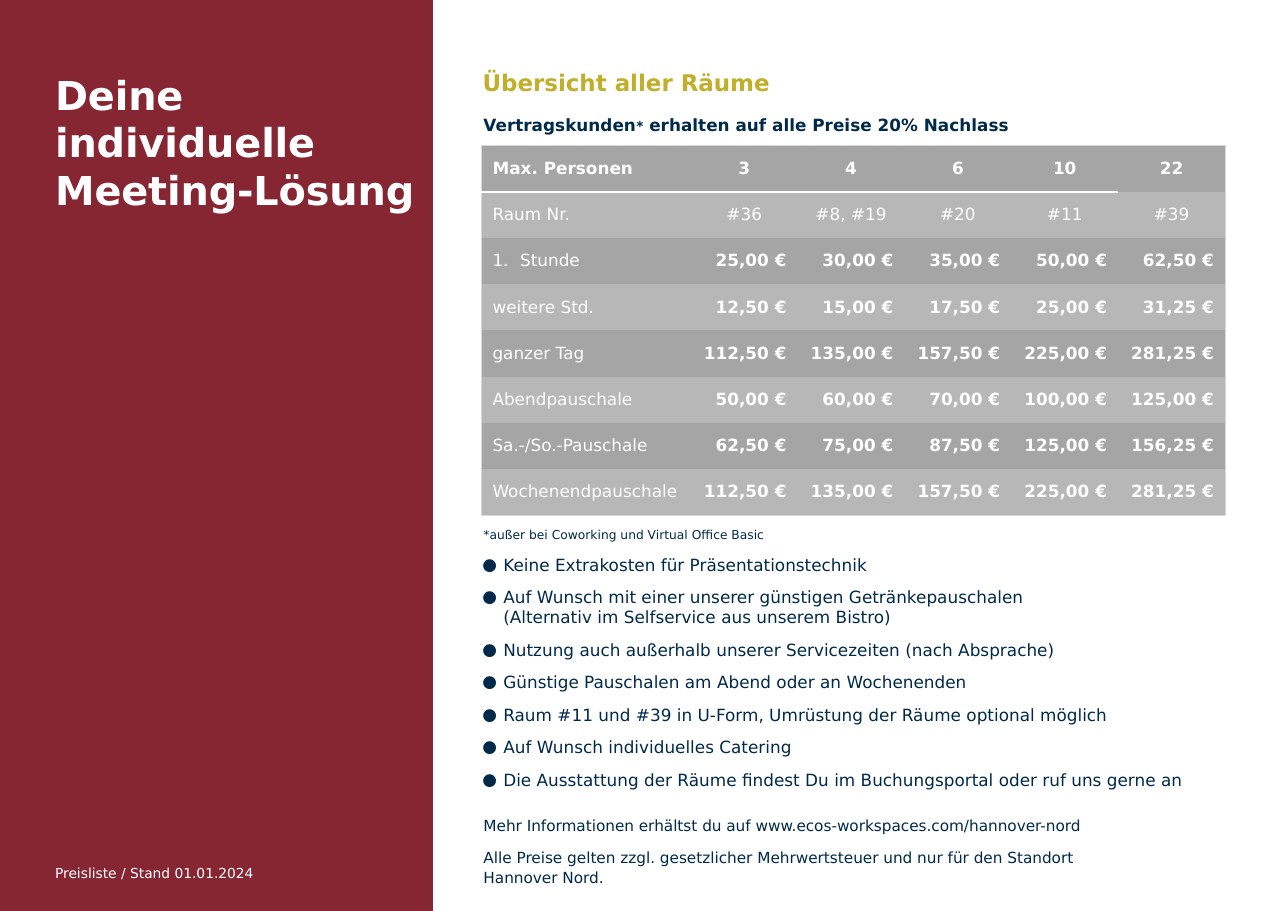
"""Builds the price list slide for the meeting rooms."""
from copy import deepcopy

from lxml import etree
from pptx import Presentation
from pptx.dml.color import RGBColor
from pptx.enum.shapes import MSO_SHAPE
from pptx.enum.text import MSO_ANCHOR, PP_ALIGN
from pptx.oxml.ns import qn
from pptx.util import Inches, Pt

RECTANGLE = MSO_SHAPE.RECTANGLE
MIDDLE = MSO_ANCHOR.MIDDLE
LEFT, CENTER, RIGHT = PP_ALIGN.LEFT, PP_ALIGN.CENTER, PP_ALIGN.RIGHT

FONT = "DejaVu Sans"
WHITE, NAVY, GOLD, WINE = "FFFFFF", "002A4A", "C1AF2B", "862633"
ROW_FILLS = ("A5A5A5", "B7B7B7")
FRAME = "D8D8D8"
NO_TABLE_STYLE = "{2D5ABB26-0587-4C30-8999-92F81FD0307C}"

SLIDE_W, SLIDE_H, PANEL_W = 11.69, 8.27, 3.93
PANEL_X, CONTENT_X, CONTENT_W = 0.49, 4.37, 6.87
PADDING = 0.1
TABLE_Y, LABEL_W, PRICE_W, ROW_H = 1.32, 1.9, 0.97, 0.42

TITLE = "Deine individuelle Meeting-Lösung"
EDITION = "Preisliste / Stand 01.01.2024"
HEADING = "Übersicht aller Räume"
DISCOUNT = [("Vertragskunden", 11), ("*", 9), (" erhalten auf alle Preise 20% Nachlass", 11)]
FOOTNOTE = "*außer bei Coworking und Virtual Office Basic"
PRICES = [
    ("Max. Personen", "3", "4", "6", "10", "22"),
    ("Raum Nr.", "#36", "#8, #19", "#20", "#11", "#39"),
    ("Stunde", "25,00 €", "30,00 €", "35,00 €", "50,00 €", "62,50 €"),
    ("weitere Std.", "12,50 €", "15,00 €", "17,50 €", "25,00 €", "31,25 €"),
    ("ganzer Tag", "112,50 €", "135,00 €", "157,50 €", "225,00 €", "281,25 €"),
    ("Abendpauschale", "50,00 €", "60,00 €", "70,00 €", "100,00 €", "125,00 €"),
    ("Sa.-/So.-Pauschale", "62,50 €", "75,00 €", "87,50 €", "125,00 €", "156,25 €"),
    ("Wochenendpauschale", "112,50 €", "135,00 €", "157,50 €", "225,00 €", "281,25 €"),
]
HEADER_ROW, ROOM_ROW, HOUR_ROW = 0, 1, 2
BENEFITS = [
    "Keine Extrakosten für Präsentationstechnik",
    "Auf Wunsch mit einer unserer günstigen Getränkepauschalen\n"
    "(Alternativ im Selfservice aus unserem Bistro)",
    "Nutzung auch außerhalb unserer Servicezeiten (nach Absprache)",
    "Günstige Pauschalen am Abend oder an Wochenenden",
    "Raum #11 und #39 in U-Form, Umrüstung der Räume optional möglich",
    "Auf Wunsch individuelles Catering",
    "Die Ausstattung der Räume findest Du im Buchungsportal oder ruf uns gerne an",
]
NOTES = [
    "Mehr Informationen erhältst du auf www.ecos-workspaces.com/hannover-nord",
    "Alle Preise gelten zzgl. gesetzlicher Mehrwertsteuer und nur für den Standort Hannover Nord.",
]


def paint(color_format, color):
    color_format.rgb = RGBColor.from_string(color)


def fill_solid(fill, color):
    fill.solid()
    paint(fill.fore_color, color)


def format_runs(paragraph, size, color, bold=False):
    for run in paragraph.runs:
        run.font.name, run.font.size, run.font.bold = FONT, Pt(size), bold
        paint(run.font.color, color)
    for line_break in paragraph._p.findall(qn("a:br")):
        line_break.insert(0, deepcopy(paragraph.runs[0]._r.rPr))


def indent(paragraph, margin, first_line=0.0):
    properties = paragraph._p.get_or_add_pPr()
    properties.set("marL", str(Inches(margin)))
    properties.set("indent", str(Inches(first_line)))
    return properties


def add_text_frame(slide, x, y, w, h, side=0.0, top=0.0):
    frame = slide.shapes.add_textbox(Inches(x), Inches(y), Inches(w), Inches(h)).text_frame
    frame.word_wrap = True
    frame.margin_left = frame.margin_right = Inches(side)
    frame.margin_top = frame.margin_bottom = Inches(top)
    return frame


def add_line(slide, text, place, size, color, bold=False, top=0.01):
    paragraph = add_text_frame(slide, *place, top=top).paragraphs[0]
    paragraph.text = text
    indent(paragraph, 0.01)
    format_runs(paragraph, size, color, bold)
    return paragraph


def add_border(cell, side, color, width):
    properties = cell._tc.get_or_add_tcPr()
    line = etree.Element(qn("a:" + side), w=str(Pt(width)))
    solid = etree.SubElement(line, qn("a:solidFill"))
    etree.SubElement(solid, qn("a:srgbClr"), val=color)
    properties.insert(len(properties) - 1, line)


def add_price_table(slide):
    rows, columns = len(PRICES), len(PRICES[0])
    widths = [LABEL_W] + [PRICE_W] * (columns - 1)
    table = slide.shapes.add_table(rows, columns, Inches(CONTENT_X), Inches(TABLE_Y),
                                   Inches(sum(widths)), Inches(rows * ROW_H)).table
    table._tbl.tblPr.find(qn("a:tableStyleId")).text = NO_TABLE_STYLE
    table.first_row = table.horz_banding = False
    for column, width in zip(table.columns, widths):
        column.width = Inches(width)
    for r, values in enumerate(PRICES):
        table.rows[r].height = Inches(ROW_H)
        for c, value in enumerate(values):
            cell = table.cell(r, c)
            cell.vertical_anchor = MIDDLE
            fill_solid(cell.fill, ROW_FILLS[r % 2])
            paragraph = cell.text_frame.paragraphs[0]
            paragraph.text = value
            paragraph.alignment = LEFT if c == 0 else CENTER if r <= ROOM_ROW else RIGHT
            if r == HOUR_ROW and c == 0:
                etree.SubElement(indent(paragraph, 0.25, -0.25), qn("a:buAutoNum"),
                                 type="arabicPeriod")
            format_runs(paragraph, 11, WHITE, r == HEADER_ROW or (c > 0 and r != ROOM_ROW))
            if c == 0:
                add_border(cell, "lnL", FRAME, 0.5)
            if c == columns - 1:
                add_border(cell, "lnR", FRAME, 0.5)
            if r == HEADER_ROW:
                add_border(cell, "lnT", FRAME, 0.5)
                if c < columns - 1:
                    add_border(cell, "lnB", WHITE, 1.5)
            if r == rows - 1:
                add_border(cell, "lnB", FRAME, 0.5)


def add_benefits(slide):
    frame = add_text_frame(slide, CONTENT_X - PADDING, 4.74, CONTENT_W, 2.5, PADDING, 0.05)
    for i, text in enumerate([FOOTNOTE] + BENEFITS):
        paragraph = frame.add_paragraph() if i else frame.paragraphs[0]
        paragraph.text = text
        paragraph.space_after = Pt(8)
        if i:
            properties = indent(paragraph, 0.2, -0.19)
            bullet_color = etree.SubElement(properties, qn("a:buClr"))
            etree.SubElement(bullet_color, qn("a:srgbClr"), val=NAVY)
            etree.SubElement(properties, qn("a:buFont"), typeface=FONT)
            etree.SubElement(properties, qn("a:buChar"), char="●")
        else:
            indent(paragraph, 0.02)
        format_runs(paragraph, 11 if i else 8, NAVY)


def add_notes(slide):
    frame = add_text_frame(slide, CONTENT_X - PADDING, 7.35, 5.77, 0.74, PADDING, 0.05)
    for i, text in enumerate(NOTES):
        paragraph = frame.add_paragraph() if i else frame.paragraphs[0]
        paragraph.text = text
        paragraph.line_spacing = 1.07
        if i:
            paragraph.space_before = Pt(8)
        indent(paragraph, 0.02)
        format_runs(paragraph, 10, NAVY)


def add_discount(slide):
    frame = add_text_frame(slide, CONTENT_X - PADDING, 0.99, CONTENT_W, 0.29, PADDING, 0.05)
    paragraph = frame.paragraphs[0]
    indent(paragraph, 0.02)
    for text, size in DISCOUNT:
        paragraph.add_run().text = text
    format_runs(paragraph, 11, NAVY, True)
    for run, (text, size) in zip(paragraph.runs, DISCOUNT):
        run.font.size = Pt(size)


def main():
    deck = Presentation()
    deck.slide_width, deck.slide_height = Inches(SLIDE_W), Inches(SLIDE_H)
    slide = deck.slides.add_slide(deck.slide_layouts[6])
    panel = slide.shapes.add_shape(RECTANGLE, 0, 0, Inches(PANEL_W), Inches(SLIDE_H))
    panel.shadow.inherit = False
    fill_solid(panel.fill, WINE)
    panel.line.fill.background()
    title = add_line(slide, TITLE, (PANEL_X, 0.63, 3.28, 1.8), 26, WHITE, True)
    title.runs[0]._r.rPr.set("spc", "-10")
    add_line(slide, EDITION, (PANEL_X, 7.84, 2.02, 0.17), 9, WHITE)
    add_line(slide, HEADING, (CONTENT_X, 0.56, CONTENT_W, 0.31), 15, GOLD, True, 0.06)
    add_discount(slide)
    add_price_table(slide)
    add_benefits(slide)
    add_notes(slide)
    deck.save("out.pptx")


if __name__ == "__main__":
    main()
